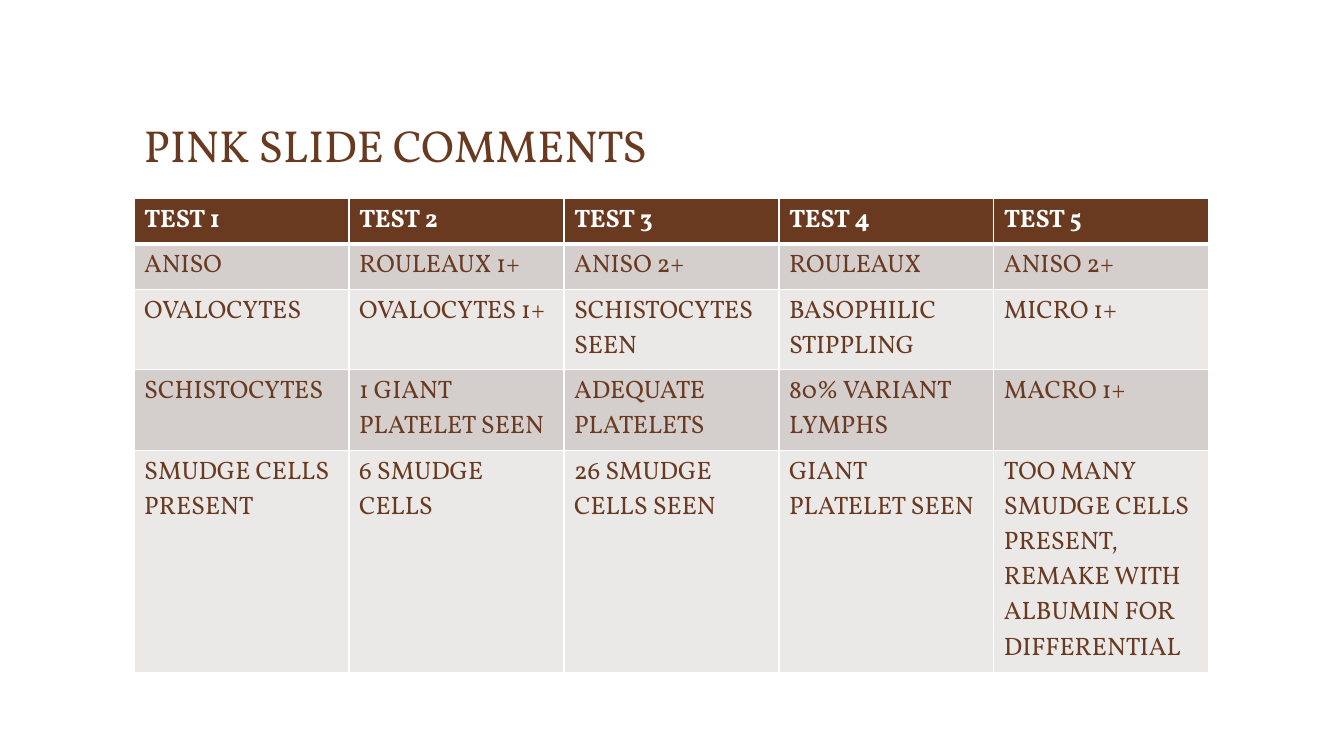
from dataclasses import dataclass

from lxml.etree import SubElement
from pptx import Presentation
from pptx.dml.color import RGBColor
from pptx.enum.text import MSO_ANCHOR
from pptx.oxml.ns import qn
from pptx.slide import Slide
from pptx.table import _Cell as Cell
from pptx.text.text import TextFrame
from pptx.util import Inches, Pt

BROWN, WHITE = "6A3A20", "FFFFFF"
LEFT, WIDTH = 1.33, 10.66
TABLE_TOP = 1.97
LINE_HEIGHT, CELL_PADDING = 0.35, 0.1


@dataclass(frozen=True)
class RowStyle:
    fill: str
    color: str = BROWN
    bold: bool = False
    bottom_border: float = 1


@dataclass(frozen=True)
class CommentRow:
    style: RowStyle
    lines: int
    texts: list[str]

    @property
    def height(self) -> float:
        return self.lines * LINE_HEIGHT + CELL_PADDING


HEADER = RowStyle(BROWN, WHITE, bold=True, bottom_border=3)
DARK_BAND, LIGHT_BAND = RowStyle("D4CECD"), RowStyle("EBE8E8")

COMMENTS = [
    CommentRow(HEADER, 1, ["TEST 1", "TEST 2", "TEST 3", "TEST 4", "TEST 5"]),
    CommentRow(DARK_BAND, 1, ["ANISO", "ROULEAUX 1+", "ANISO 2+", "ROULEAUX", "ANISO 2+"]),
    CommentRow(LIGHT_BAND, 2, ["OVALOCYTES", "OVALOCYTES 1+", "SCHISTOCYTES SEEN",
                               "BASOPHILIC STIPPLING", "MICRO 1+"]),
    CommentRow(DARK_BAND, 2, ["SCHISTOCYTES", "1 GIANT PLATELET SEEN", "ADEQUATE PLATELETS",
                              "80% VARIANT LYMPHS", "MACRO 1+"]),
    CommentRow(LIGHT_BAND, 6, ["SMUDGE CELLS PRESENT", "6 SMUDGE CELLS", "26 SMUDGE CELLS SEEN",
                               "GIANT PLATELET SEEN",
                               "TOO MANY SMUDGE CELLS PRESENT, REMAKE WITH ALBUMIN FOR DIFFERENTIAL"]),
]


def rgb(value: str) -> RGBColor:
    return RGBColor.from_string(value)


def write_text(frame: TextFrame, text: str, size: float, color: str, bold: bool = False) -> None:
    run = frame.paragraphs[0].add_run()
    run.text = text
    font_format = {"name": "Vollkorn", "size": Pt(size), "bold": bold}
    for attribute, value in font_format.items():
        setattr(run.font, attribute, value)
    run.font.color.rgb = rgb(color)


def add_borders(cell: Cell, top: float, bottom: float) -> None:
    """Draw white borders; call before filling, since lines precede the fill in XML."""
    properties = cell._tc.get_or_add_tcPr()
    for side, width in {"lnL": 1, "lnR": 1, "lnT": top, "lnB": bottom}.items():
        line = SubElement(properties, qn(f"a:{side}"), w=str(Pt(width)))
        fill = SubElement(line, qn("a:solidFill"))
        SubElement(fill, qn("a:srgbClr"), val=WHITE)


def add_title(slide: Slide) -> None:
    title = slide.shapes.add_textbox(Inches(LEFT), Inches(0.47), Inches(WIDTH), Inches(1.28))
    frame = title.text_frame
    frame.word_wrap = True
    frame.vertical_anchor = MSO_ANCHOR.BOTTOM
    write_text(frame, "PINK SLIDE COMMENTS", 32, BROWN)


def add_comment_table(slide: Slide) -> None:
    table = slide.shapes.add_table(
        len(COMMENTS), len(COMMENTS[0].texts), Inches(LEFT), Inches(TABLE_TOP),
        Inches(WIDTH), Inches(sum(row.height for row in COMMENTS)),
    ).table
    top_border = 1
    for row_index, row in enumerate(COMMENTS):
        style = row.style
        table.rows[row_index].height = Inches(row.height)
        for column_index, text in enumerate(row.texts):
            cell = table.cell(row_index, column_index)
            add_borders(cell, top_border, style.bottom_border)
            cell.fill.solid()
            cell.fill.fore_color.rgb = rgb(style.fill)
            write_text(cell.text_frame, text, 18, style.color, style.bold)
        top_border = style.bottom_border


def main() -> None:
    presentation = Presentation()
    presentation.slide_width, presentation.slide_height = Inches(13.33), Inches(7.5)
    slide = presentation.slides.add_slide(presentation.slide_layouts[6])
    add_title(slide)
    add_comment_table(slide)
    presentation.save("out.pptx")


if __name__ == "__main__":
    main()
